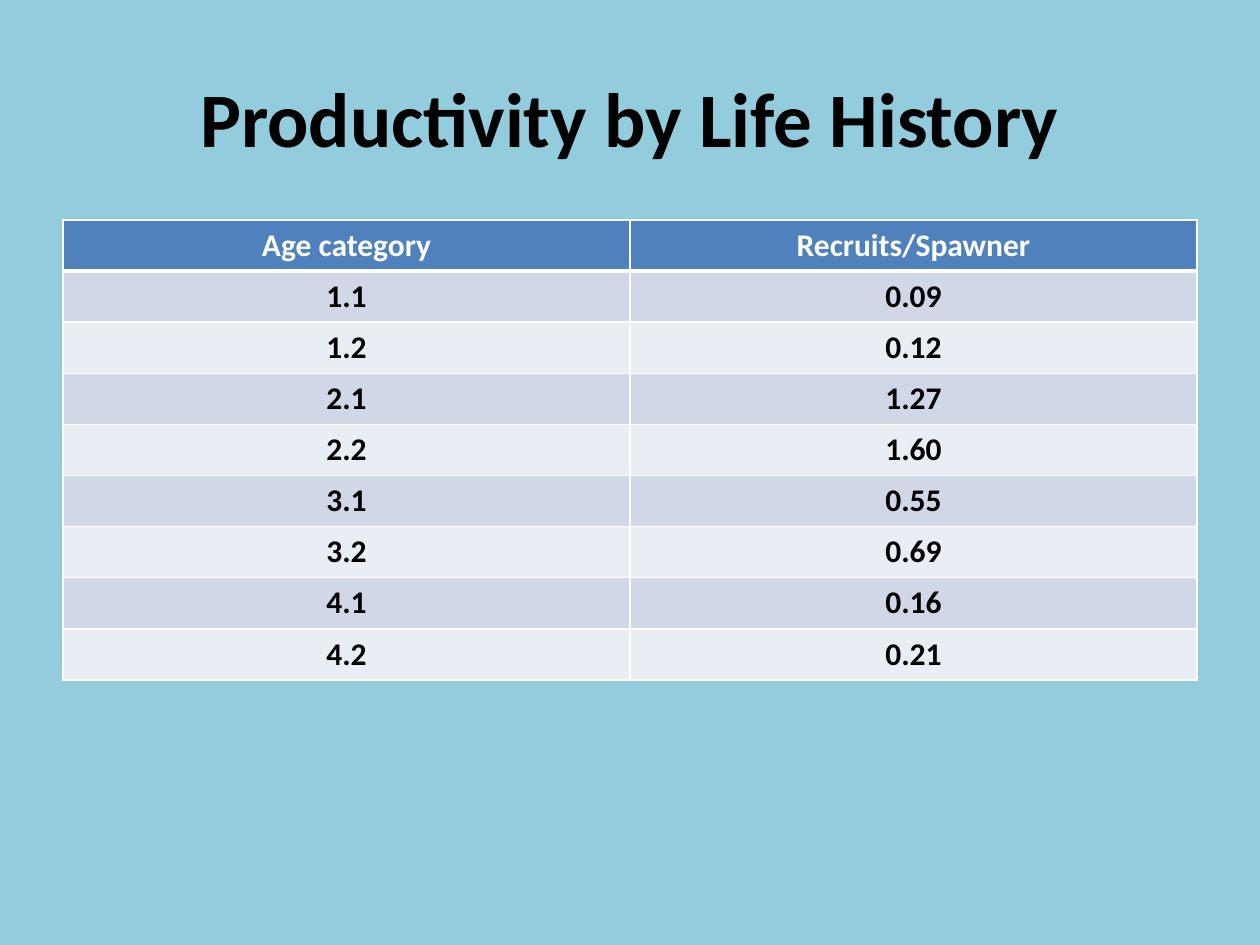
from dataclasses import dataclass

from lxml.etree import SubElement
from pptx import Presentation
from pptx.dml.color import RGBColor
from pptx.enum.text import MSO_ANCHOR, PP_ALIGN
from pptx.oxml.ns import qn
from pptx.util import Pt

# Content
TITLE = "Productivity by Life History"
HEADER = ("Age category", "Recruits/Spawner")
RECORDS = [
    ("1.1", "0.09"),
    ("1.2", "0.12"),
    ("2.1", "1.27"),
    ("2.2", "1.60"),
    ("3.1", "0.55"),
    ("3.2", "0.69"),
    ("4.1", "0.16"),
    ("4.2", "0.21"),
]


@dataclass(frozen=True)
class Theme:
    font: str = "Calibri"
    background: str = "93CDDD"
    ink: str = "000000"
    header_fill: str = "4F81BD"
    band_fills: tuple = ("D0D8E8", "E9EDF4")
    white: str = "FFFFFF"
    title_size: int = 44
    table_size: int = 18
    thin_border: int = 1
    thick_border: int = 3


THEME = Theme()

# Geometry in px: left, top, width, height
EMU_PER_PX = 914400 / 126
SLIDE_SIZE = (1260, 945)
TITLE_BOX = (63, 38, 1134, 157)
TABLE_BOX = (63, 220, 1134, 460)


def px(length):
    return round(length * EMU_PER_PX)


def set_text(text_frame, text, *, size, color, bold=True, align=PP_ALIGN.CENTER):
    paragraph = text_frame.paragraphs[0]
    paragraph.alignment = align
    run = paragraph.add_run()
    run.text = text
    run.font.name = THEME.font
    run.font.size = Pt(size)
    run.font.bold = bold
    run.font.color.rgb = RGBColor.from_string(color)


def set_borders(cell, **widths):
    properties = cell._tc.get_or_add_tcPr()
    for side in "LRTB":
        width = widths.get(side, THEME.thin_border)
        line = SubElement(properties, qn(f"a:ln{side}"), w=str(Pt(width)))
        fill = SubElement(line, qn("a:solidFill"))
        SubElement(fill, qn("a:srgbClr"), val=THEME.white)


def add_title(slide):
    shape = slide.shapes.add_textbox(*map(px, TITLE_BOX))
    shape.text_frame.word_wrap = True
    shape.text_frame.vertical_anchor = MSO_ANCHOR.MIDDLE
    set_text(shape.text_frame, TITLE, size=THEME.title_size, color=THEME.ink)


def add_productivity_table(slide):
    rows = [HEADER, *RECORDS]
    # Rows and columns share the box equally
    table = slide.shapes.add_table(
        len(rows), len(HEADER), *map(px, TABLE_BOX)
    ).table
    for row_index, values in enumerate(rows):
        if row_index == 0:
            fill, color, borders = THEME.header_fill, THEME.white, {"B": THEME.thick_border}
        else:
            fill = THEME.band_fills[(row_index - 1) % 2]
            color = THEME.ink
            borders = {"T": THEME.thick_border} if row_index == 1 else {}
        for column_index, value in enumerate(values):
            cell = table.cell(row_index, column_index)
            set_borders(cell, **borders)
            cell.fill.solid()
            cell.fill.fore_color.rgb = RGBColor.from_string(fill)
            set_text(cell.text_frame, value, size=THEME.table_size, color=color)


def main():
    presentation = Presentation()
    presentation.slide_width, presentation.slide_height = map(px, SLIDE_SIZE)
    slide = presentation.slides.add_slide(presentation.slide_layouts[6])
    slide.background.fill.solid()
    slide.background.fill.fore_color.rgb = RGBColor.from_string(THEME.background)
    add_title(slide)
    add_productivity_table(slide)
    presentation.save("out.pptx")


if __name__ == "__main__":
    main()
